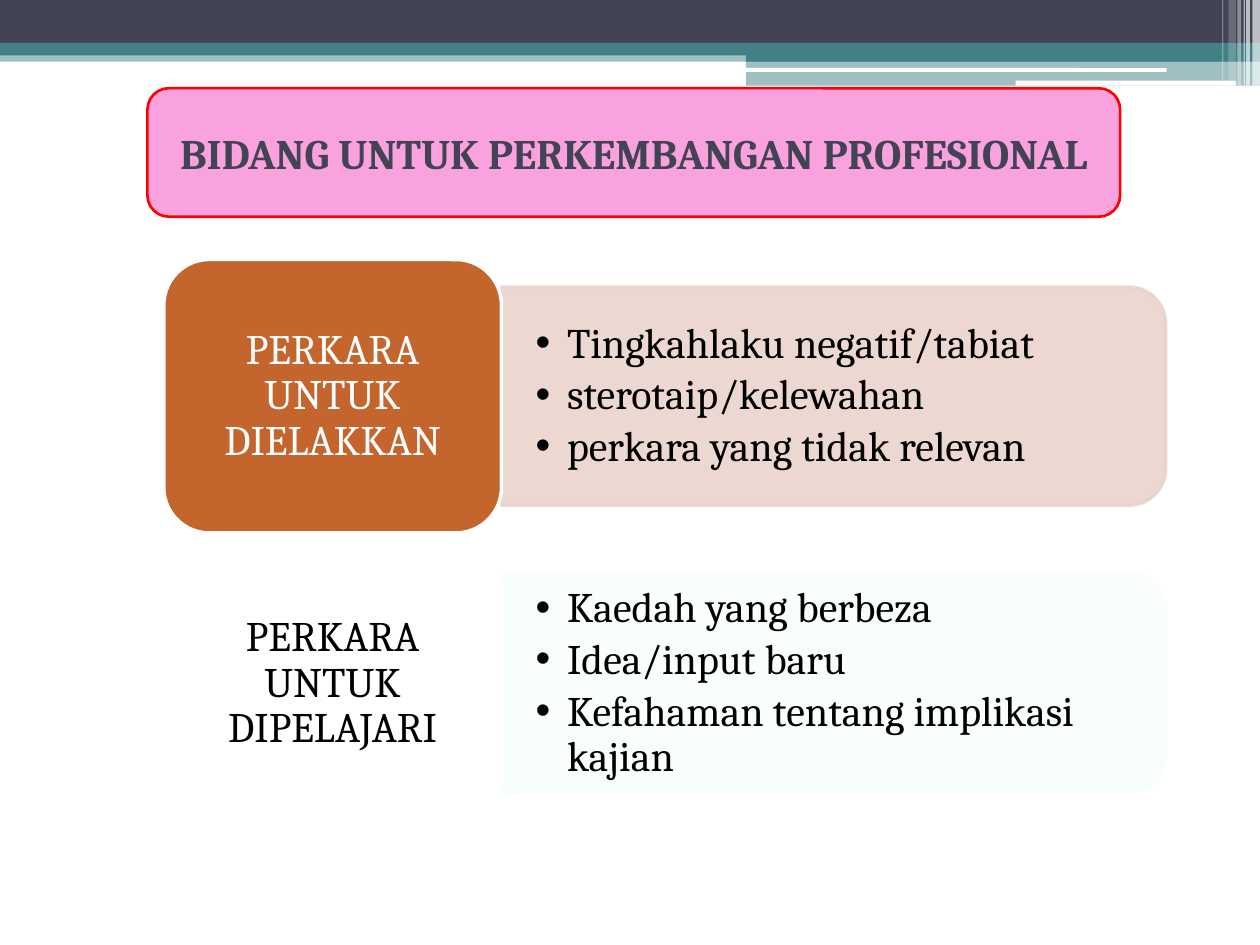
from dataclasses import dataclass

from lxml import etree
from pptx import Presentation
from pptx import util as u
from pptx.dml.color import RGBColor
from pptx.enum import shapes, text
from pptx.oxml.ns import qn

In = u.Inches
MSO = shapes.MSO_SHAPE


@dataclass(frozen=True)
class Theme:
    """Colours, font and type size of the slide."""
    navy: str = "424456"
    teal: str = "438086"
    white: str = "FFFFFF"
    black: str = "000000"
    pink: str = "FAA2DD"
    red: str = "FF0000"
    orange: str = "C4652D"
    blush: str = "EAD3CD"
    mint: str = "F8FEFD"
    font: str = "Cambria"
    size: int = 24


T = Theme()


def assign(obj, **values):
    """Set each named attribute of an object."""
    for name, value in values.items():
        setattr(obj, name, value)


def paint(fill, colour, alpha=100):
    """Fill with a solid colour at a given opacity in percent."""
    fill.solid()
    fill.fore_color.rgb = RGBColor.from_string(colour)
    if alpha < 100:
        clr = fill._xPr.find(qn("a:solidFill"))[0]
        etree.SubElement(clr, qn("a:alpha"), val=str(alpha * 1000))


def add_shape(s, kind, box, colour, alpha=100, line=None, width=2):
    """Add a preset shape in a box of left, top, width, height."""
    sp = s.shapes.add_shape(kind, *map(In, box))
    sp.shadow.inherit = False
    paint(sp.fill, colour, alpha)
    if line:
        sp.line.width = u.Pt(width)
        paint(sp.line.fill, line, alpha)
    else:
        sp.line.fill.background()
    return sp


def write(p, wording, colour, bold=False, **fmt):
    """Write one formatted run into a paragraph."""
    assign(p, **fmt)
    r = p.add_run()
    r.text = wording
    assign(r.font, name=T.font, size=u.Pt(T.size), bold=bold)
    r.font.color.rgb = RGBColor.from_string(colour)


def add_label(sp, wording, colour, **fmt):
    """Centre a label inside a shape."""
    tf = sp.text_frame
    assign(tf, word_wrap=True, vertical_anchor=text.MSO_ANCHOR.MIDDLE)
    write(tf.paragraphs[0], wording, colour, alignment=text.PP_ALIGN.CENTER, **fmt)


def add_banner(s, width):
    """Draw the top bands, the white rules and the stripes at the right edge."""
    step = 5.92
    bands = [
        (0, 0.4, width, 0.09, T.teal, 50),
        (0, 0, width, 0.34, T.navy, 100),
        (0, 0.34, width, 0.1, T.teal, 100),
        (step, 0.39, width - step, 0.1, T.teal, 100),
        (step, 0.48, width - step, 0.2, T.teal, 50),
    ]
    for *box, colour, alpha in bands:
        add_shape(s, MSO.RECTANGLE, box, colour, alpha)
    for box in [(5.91, 0.54, 3.35, 0.03), (8.06, 0.64, 1.75, 0.04)]:
        add_shape(s, MSO.ROUNDED_RECTANGLE, box, T.white)
    stripes = [
        (9.94, 0.06, 0.68, 65), (9.89, 0.03, 0.68, 65), (9.87, 0.01, 0.68, 60),
        (9.82, 0.03, 0.68, 40), (9.75, 0.06, 0.64, 20), (9.7, 0.01, 0.64, 30),
    ]
    for x, w, h, alpha in stripes:
        add_shape(s, MSO.RECTANGLE, (x, 0, w, h), T.white, alpha)


def add_title(s, box, wording):
    """Place the framed title."""
    sp = add_shape(s, MSO.ROUNDED_RECTANGLE, box, T.pink, line=T.red, width=1.5)
    add_label(sp, wording, T.navy, bold=True)


def add_bullets(s, box, items):
    """Place a bulleted list, centred vertically in its box."""
    tf = s.shapes.add_textbox(*map(In, box)).text_frame
    assign(tf, word_wrap=True, vertical_anchor=text.MSO_ANCHOR.MIDDLE,
           margin_left=In(0.27), margin_right=In(0.27),
           margin_top=In(0.14), margin_bottom=In(0.14))
    for i, item in enumerate(items):
        p = tf.add_paragraph() if i else tf.paragraphs[0]
        write(p, item, T.black, line_spacing=0.9, space_after=u.Pt(3.6))
        pPr = p._p.get_or_add_pPr()
        pPr.set("marL", str(In(0.25)))
        pPr.set("indent", str(-In(0.25)))
        etree.SubElement(pPr, qn("a:buFont"), typeface="Arial")
        etree.SubElement(pPr, qn("a:buChar"), char="•")


def add_row(s, box, heading, items, fill, ink, tint):
    """Place a heading block with its list panel on the right."""
    x, y, w, h = box
    head_w, panel_h, list_h = 2.68, 1.73, 1.57
    panel_w, mid = w - head_w, y + h / 2
    panel_x = x + head_w
    turned = (panel_x + (panel_w - panel_h) / 2, mid - panel_w / 2, panel_h, panel_w)
    panel = add_shape(s, MSO.ROUND_2_SAME_RECTANGLE, turned, tint, 90, tint)
    panel.rotation = 90
    add_bullets(s, (panel_x, mid - list_h / 2, panel_w - 0.08, list_h), items)
    head = add_shape(s, MSO.ROUNDED_RECTANGLE, (x, y, head_w, h), fill, line=T.white)
    add_label(head, heading, ink, line_spacing=0.9)


def main():
    """Build and save the slide."""
    prs = Presentation()
    assign(prs, slide_width=In(10), slide_height=In(7.5))
    s = prs.slides.add_slide(prs.slide_layouts[6])
    add_banner(s, 10)
    rows = [
        ("PERKARA UNTUK DIELAKKAN",
         ["Tingkahlaku negatif/tabiat", "sterotaip/kelewahan",
          "perkara yang tidak relevan"],
         T.orange, T.white, T.blush),
        ("PERKARA UNTUK DIPELAJARI",
         ["Kaedah yang berbeza", "Idea/input baru",
          "Kefahaman tentang implikasi kajian"],
         T.white, T.black, T.mint),
    ]
    top, height, gap = 2.06, 2.17, 0.11
    for i, row in enumerate(rows):
        add_row(s, (1.3, top + i * (height + gap), 7.95, height), *row)
    add_title(s, (1.17, 0.7, 7.72, 1.02), "BIDANG UNTUK PERKEMBANGAN PROFESIONAL")
    prs.save("out.pptx")


if __name__ == "__main__":
    main()
